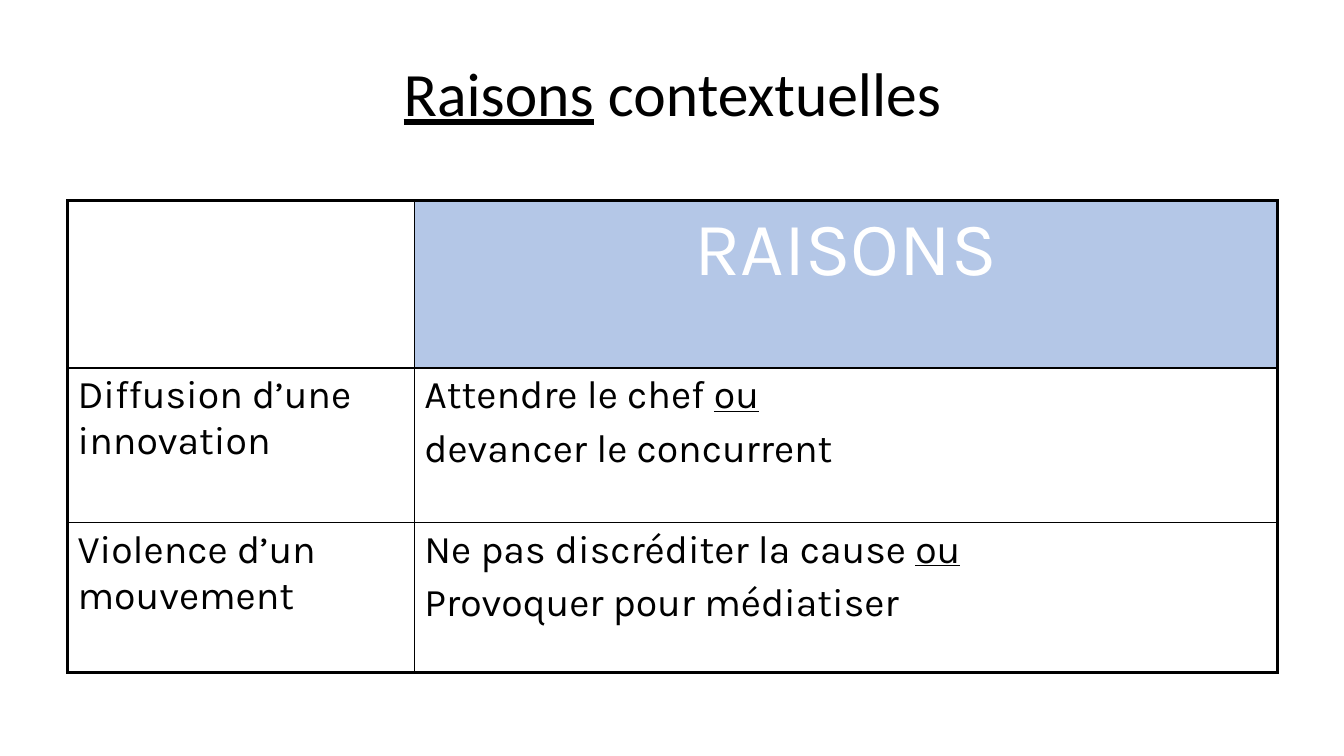
from lxml import etree
from pptx import Presentation
from pptx.dml.color import RGBColor
from pptx.enum.text import MSO_ANCHOR, PP_ALIGN
from pptx.oxml.ns import qn
from pptx.util import Pt

PX = 9144
BLACK = RGBColor(0x00, 0x00, 0x00)
WHITE = RGBColor(0xFF, 0xFF, 0xFF)
HEADER_BLUE = RGBColor(0xB4, 0xC7, 0xE7)
LEFT, CENTER = PP_ALIGN.LEFT, PP_ALIGN.CENTER
MIDDLE = MSO_ANCHOR.MIDDLE
TITLE_ONLY = 5

TITLE_BOX = (67, 32, 1200, 127)
TABLE_BOX = (67, 199, 1200, 468)
COLUMN_WIDTHS = (344, 856)
ROW_HEIGHTS = (166, 153, 149)
THIN, THICK = 12700, 28575

TITLE = [[("Raisons", True), (" contextuelles", False)]]
ROWS = [
    [[], [[("RAISONS", False)]]],
    [
        [[("Diffusion d’une innovation", False)]],
        [[("Attendre le chef ", False), ("ou", True)], [("devancer le concurrent", False)]],
    ],
    [
        [[("Violence d’un mouvement", False)]],
        [[("Ne pas discréditer la cause ", False), ("ou", True)], [("Provoquer pour médiatiser", False)]],
    ],
]


def write_text(frame, paragraphs, *, font, size, color=BLACK, align=LEFT, line_spacing=1.0, gap=0.0):
    """Write paragraphs of (text, underlined) runs; gap is a share of the size."""
    for index, runs in enumerate(paragraphs):
        paragraph = frame.add_paragraph() if index else frame.paragraphs[0]
        paragraph.alignment = align
        paragraph.line_spacing = line_spacing
        paragraph.space_before = Pt(size * gap)
        for text, underlined in runs:
            run = paragraph.add_run()
            run.text = text
            run.font.name = font
            run.font.size = Pt(size)
            run.font.bold = False
            run.font.underline = underlined
            run.font.color.rgb = color


def set_borders(cell, widths):
    """Draw solid black cell borders from a mapping of side to width."""
    properties = cell._tc.get_or_add_tcPr()
    for side, width in widths.items():
        line = etree.SubElement(properties, qn(f"a:ln{side}"), w=str(width))
        fill = etree.SubElement(line, qn("a:solidFill"))
        etree.SubElement(fill, qn("a:srgbClr"), val=str(BLACK))


def place_title(slide, box):
    """Move the title placeholder into its box and fill it."""
    title = slide.shapes.title
    title.left, title.top, title.width, title.height = [value * PX for value in box]
    title.text_frame.vertical_anchor = MIDDLE
    write_text(title.text_frame, TITLE, font="Calibri", size=44, align=CENTER, line_spacing=0.9)


def place_table(slide, box):
    """Build the table of reasons with a thick outer frame."""
    last_row, last_column = len(ROW_HEIGHTS) - 1, len(COLUMN_WIDTHS) - 1
    left, top, width, height = [value * PX for value in box]
    table = slide.shapes.add_table(last_row + 1, last_column + 1, left, top, width, height).table
    table.first_row = table.horz_banding = False
    for column, column_width in zip(table.columns, COLUMN_WIDTHS):
        column.width = column_width * PX
    for row, row_height in zip(table.rows, ROW_HEIGHTS):
        row.height = row_height * PX
    for row_index, row in enumerate(ROWS):
        for column_index, paragraphs in enumerate(row):
            cell = table.cell(row_index, column_index)
            set_borders(cell, {
                "L": THICK if column_index == 0 else THIN,
                "R": THICK if column_index == last_column else THIN,
                "T": THICK if row_index == 0 else THIN,
                "B": THICK if row_index == last_row else THIN,
            })
            if row_index == 0 and paragraphs:
                cell.fill.solid()
                cell.fill.fore_color.rgb = HEADER_BLUE
                style = {"size": 54, "color": WHITE, "align": CENTER}
            else:
                cell.fill.background()
                style = {"size": 28}
            write_text(cell.text_frame, paragraphs, font="Karla", gap=0.2, **style)


def main():
    """Build and save the presentation."""
    presentation = Presentation()
    presentation.slide_width, presentation.slide_height = 1333 * PX, 750 * PX
    slide = presentation.slides.add_slide(presentation.slide_layouts[TITLE_ONLY])
    place_title(slide, TITLE_BOX)
    place_table(slide, TABLE_BOX)
    presentation.save("out.pptx")


if __name__ == "__main__":
    main()
